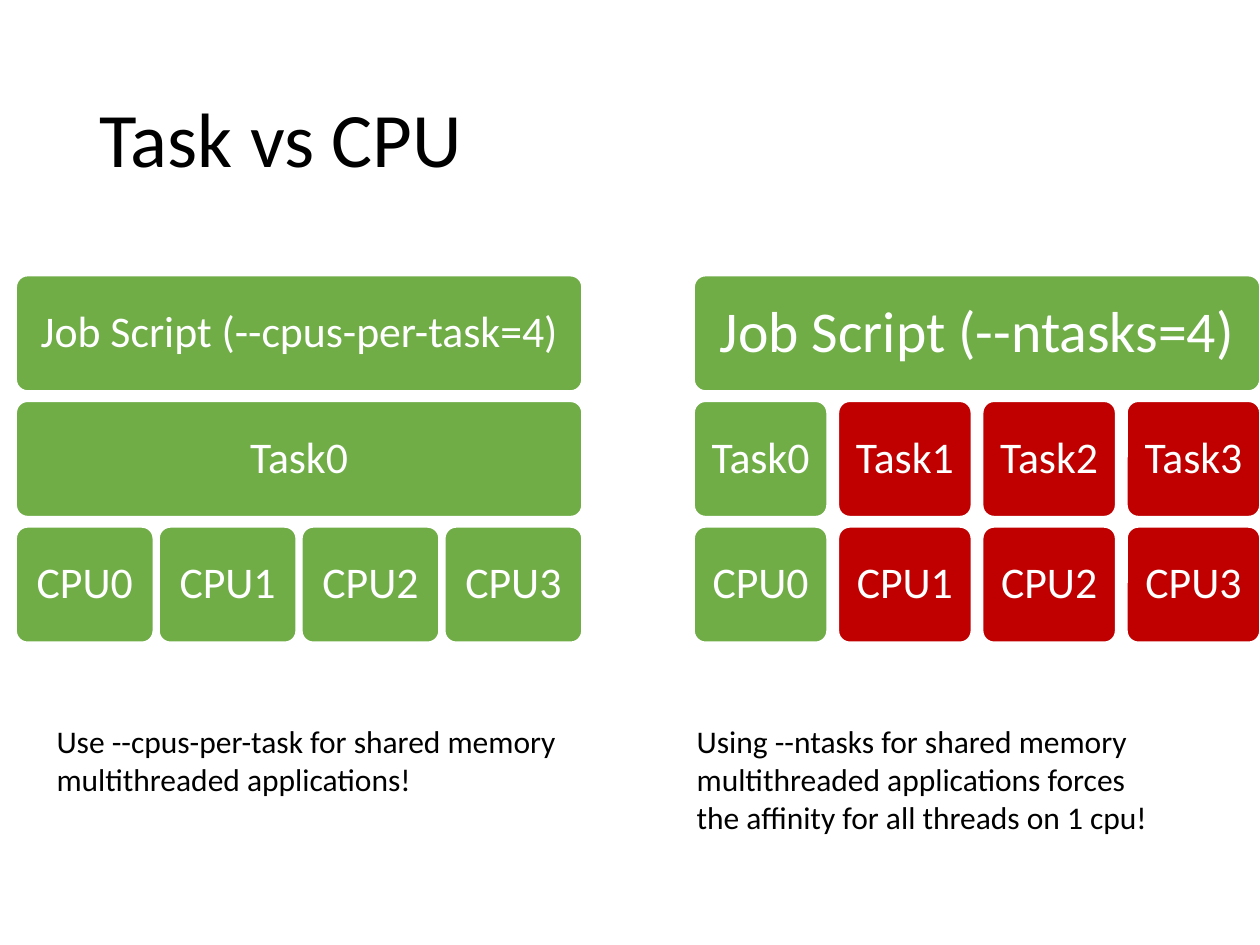
from pptx import Presentation
from pptx.dml.color import RGBColor
from pptx.enum.shapes import MSO_SHAPE
from pptx.enum.text import MSO_ANCHOR, PP_ALIGN
from pptx.util import Pt

GREEN, RED, WHITE, BLACK = "70AD47", "C00000", "FFFFFF", "000000"
ROW_TOP, ROW_PITCH, ROW_HEIGHT = 157.5, 71.8, 66
DIAGRAM_WIDTH = 323.4


def color(value):
    return RGBColor.from_string(value)


def format_paragraph(paragraph, size, font_color):
    paragraph.font.name = "Calibri"
    paragraph.font.size = Pt(size)
    paragraph.font.color.rgb = color(font_color)


def add_title(slide, text):
    title = slide.shapes.title
    title.left, title.top, title.width, title.height = Pt(49.5), Pt(29), Pt(533.5), Pt(104.4)
    title.text_frame.text = text
    title.text_frame.vertical_anchor = MSO_ANCHOR.MIDDLE
    paragraph = title.text_frame.paragraphs[0]
    paragraph.alignment = PP_ALIGN.LEFT
    paragraph.line_spacing = 0.9
    format_paragraph(paragraph, 44, BLACK)


def add_block(slide, text, left, row, width, fill=GREEN, size=25):
    shape = slide.shapes.add_shape(
        MSO_SHAPE.ROUNDED_RECTANGLE,
        Pt(left), Pt(ROW_TOP + row * ROW_PITCH), Pt(width), Pt(ROW_HEIGHT),
    )
    shape.adjustments[0] = 0.1
    shape.shadow.inherit = False
    shape.fill.solid()
    shape.fill.fore_color.rgb = color(fill)
    shape.line.color.rgb = color(WHITE)
    shape.line.width = Pt(1)
    frame = shape.text_frame
    frame.margin_left = frame.margin_right = Pt(7)
    frame.word_wrap = True
    frame.vertical_anchor = MSO_ANCHOR.MIDDLE
    frame.text = text
    paragraph = frame.paragraphs[0]
    paragraph.alignment = PP_ALIGN.CENTER
    paragraph.line_spacing = 0.9
    format_paragraph(paragraph, size, WHITE)


def add_block_row(slide, name, left, row, gap, fills):
    """Fill the diagram width with equal blocks, numbered from 0."""
    width = (DIAGRAM_WIDTH - gap * (len(fills) - 1)) / len(fills)
    for index, fill in enumerate(fills):
        add_block(slide, f"{name}{index}", left + index * (width + gap), row, width, fill)


def add_note(slide, lines, left, width, height):
    box = slide.shapes.add_textbox(Pt(left), Pt(409), Pt(width), Pt(height))
    frame = box.text_frame
    frame.word_wrap = False
    frame.text = "\n".join(lines)
    for paragraph in frame.paragraphs:
        format_paragraph(paragraph, 18, BLACK)


def main():
    presentation = Presentation()
    presentation.slide_width, presentation.slide_height = Pt(720), Pt(540)
    slide = presentation.slides.add_slide(presentation.slide_layouts[5])
    add_title(slide, "Task vs CPU")

    shared_left = 9.2
    add_block(slide, "Job Script (--cpus-per-task=4)", shared_left, 0, DIAGRAM_WIDTH)
    add_block_row(slide, "Task", shared_left, 1, 0, [GREEN])
    add_block_row(slide, "CPU", shared_left, 2, 3.2, [GREEN] * 4)

    separate_left = 396.6
    add_block(slide, "Job Script (--ntasks=4)", separate_left, 0, DIAGRAM_WIDTH, size=33)
    for row, name in enumerate(("Task", "CPU"), start=1):
        add_block_row(slide, name, separate_left, row, 6.4, [GREEN] + [RED] * 3)

    add_note(slide, ["Use --cpus-per-task for shared memory",
                     "multithreaded applications!"], 25.2, 303, 51)
    add_note(slide, ["Using --ntasks for shared memory",
                     "multithreaded applications forces",
                     "the affinity for all threads on 1 cpu!"], 391, 278.6, 72.7)
    presentation.save("out.pptx")


if __name__ == "__main__":
    main()
